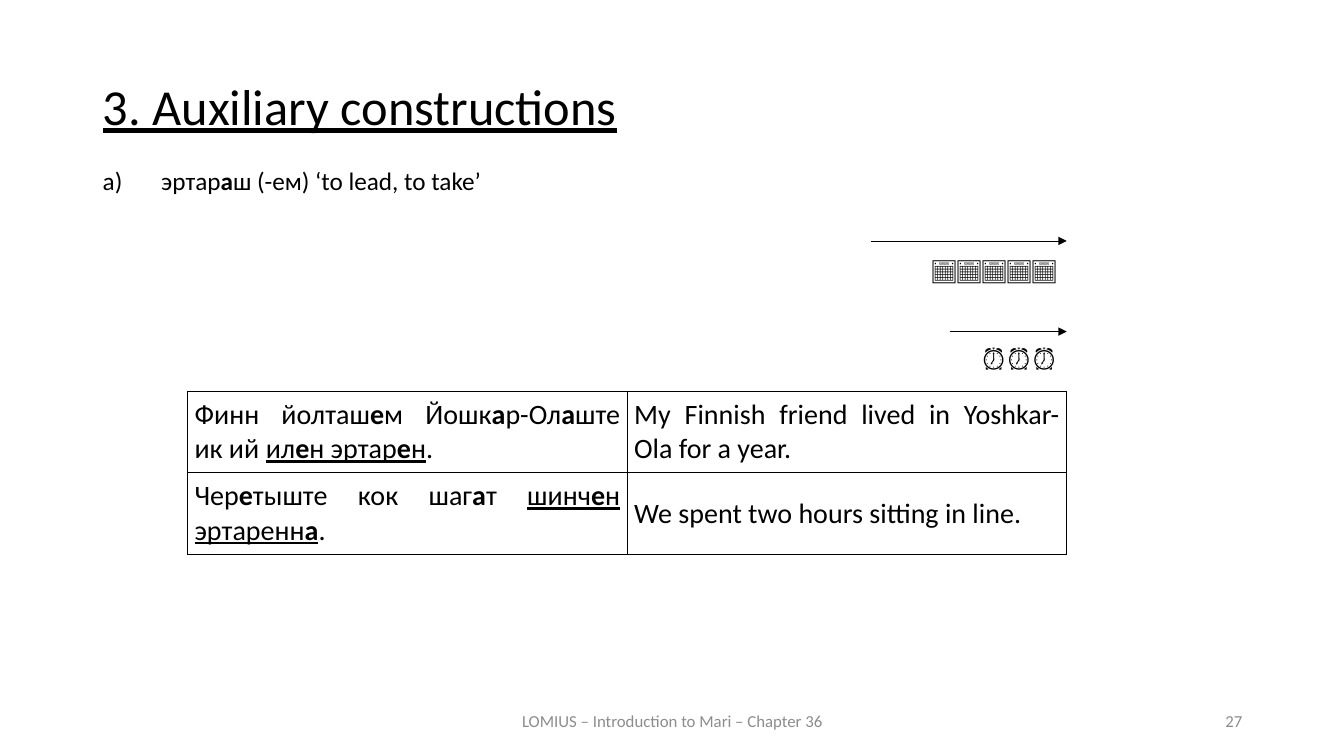
from lxml.etree import SubElement
from pptx import Presentation
from pptx.dml.color import RGBColor
from pptx.enum.shapes import MSO_CONNECTOR
from pptx.enum.text import MSO_ANCHOR as Anchor, MSO_AUTO_SIZE as AutoSize, PP_ALIGN as Align
from pptx.oxml.ns import qn
from pptx.util import Emu, Pt

COLORS = {"ink": "000000", "footer": "8C8C8C"}
FONT = "Calibri"
SCALE = 9144  # EMU per px, 100 px to the inch
TITLE_ONLY = 5
RIGHT = 1058  # shared right edge of table, arrows and symbols

EXAMPLES = [
    ("Финн йолташ*е*м Йошк*а*р-Ол*а*ште ик ий _ил*е*н эртар*е*н_.",
     "My Finnish friend lived in Yoshkar-Ola for a year."),
    ("Чер*е*тыште кок шаг*а*т _шинч*е*н эртаренн*а*_.",
     "We spent two hours sitting in line."),
]
# symbols, left of symbols, top of symbols, left of arrow, height of arrow
DURATIONS = [
    ("📅" * 5, 824, 247, 864, 239),
    ("⏰" * 3, 880, 335, 942, 329),
]


def px(length):
    return Emu(length * SCALE)


class SlideBuilder:
    def __init__(self, deck):
        self.page = deck.slides.add_slide(deck.slide_layouts[TITLE_ONLY])

    def fill_para(self, para, text, size, align=Align.LEFT, color="ink"):
        """Fill a paragraph; *...* marks bold and _..._ marks underline."""
        para.alignment = align
        para.font.size = Pt(size)
        para.font.name = FONT
        para.font.color.rgb = RGBColor.from_string(COLORS[color])
        for i, chunk in enumerate(text.split("_")):
            for j, piece in enumerate(chunk.split("*")):
                if piece:
                    span = para.add_run()
                    span.text = piece
                    if j % 2:
                        span.font.bold = True
                    if i % 2:
                        span.font.underline = True

    def title(self, text, left, top, width, height):
        box = self.page.shapes.title
        box.left, box.top, box.width, box.height = map(px, (left, top, width, height))
        frame = box.text_frame
        frame.auto_size = AutoSize.NONE
        frame.vertical_anchor = Anchor.TOP
        para = frame.paragraphs[0]
        para.line_spacing = 0.9
        self.fill_para(para, text, 36, Align.JUSTIFY)

    def text(self, text, left, top, width, size=18, align=Align.LEFT,
             color="ink", anchor=Anchor.TOP, tab=None):
        box = self.page.shapes.add_textbox(px(left), px(top), px(width), px(40))
        frame = box.text_frame
        frame.word_wrap = True
        frame.vertical_anchor = anchor
        para = frame.paragraphs[0]
        self.fill_para(para, text, size, align, color)
        if tab:
            props = para._p.get_or_add_pPr()
            stops = SubElement(props, qn("a:tabLst"))
            SubElement(stops, qn("a:tab"), pos=str(px(tab)), algn="l")
            props.insert(0, stops)

    def table(self, rows, left, top, col_width, row_height):
        columns = len(rows[0])
        table = self.page.shapes.add_table(
            len(rows), columns, px(left), px(top),
            px(col_width * columns), px(row_height * len(rows))).table
        table.first_row = table.horz_banding = False
        for r, texts in enumerate(rows):
            table.rows[r].height = px(row_height)
            for c, text in enumerate(texts):
                cell = table.cell(r, c)
                cell.vertical_anchor = Anchor.MIDDLE
                cell.margin_left = cell.margin_right = px(7)
                cell.margin_top = cell.margin_bottom = 0
                self.fill_para(cell.text_frame.paragraphs[0], text, 20, Align.JUSTIFY)
                self.border(cell)
                cell.fill.background()

    def border(self, cell):
        props = cell._tc.get_or_add_tcPr()
        for side in ("lnL", "lnR", "lnT", "lnB"):
            line = SubElement(props, qn(f"a:{side}"), w=str(Pt(1)))
            fill = SubElement(line, qn("a:solidFill"))
            SubElement(fill, qn("a:srgbClr"), val=COLORS["ink"])

    def arrow(self, left, right, y):
        arrow = self.page.shapes.add_connector(
            MSO_CONNECTOR.STRAIGHT, px(left), px(y), px(right), px(y))
        arrow.line.width = Pt(0.5)
        arrow.line.color.rgb = RGBColor.from_string(COLORS["ink"])
        SubElement(arrow.line._get_or_add_ln(), qn("a:tailEnd"), type="triangle")
        SubElement(arrow._element.spPr, qn("a:effectLst"))


def main():
    deck = Presentation()
    deck.slide_width, deck.slide_height = px(1333), px(750)
    slide = SlideBuilder(deck)
    slide.title("_3. Auxiliary constructions_", 92, 76, 1150, 83)
    slide.text("LOMIUS – Introduction to Mari – Chapter 36", 442, 695, 450, 12,
               Align.CENTER, "footer", Anchor.MIDDLE)
    slide.text("27", 942, 695, 300, 12, Align.RIGHT, "footer", Anchor.MIDDLE)
    slide.text("a)\tэртар*а*ш (-ем) ‘to lead, to take’", 92, 159, 1108, tab=58)
    slide.table(EXAMPLES, 186, 388, 436, 81)
    for symbols, left, top, arrow_left, arrow_y in DURATIONS:
        slide.text(symbols, left, top, RIGHT - left, align=Align.RIGHT)
        slide.arrow(arrow_left, RIGHT, arrow_y)
    deck.save("out.pptx")


if __name__ == "__main__":
    main()
